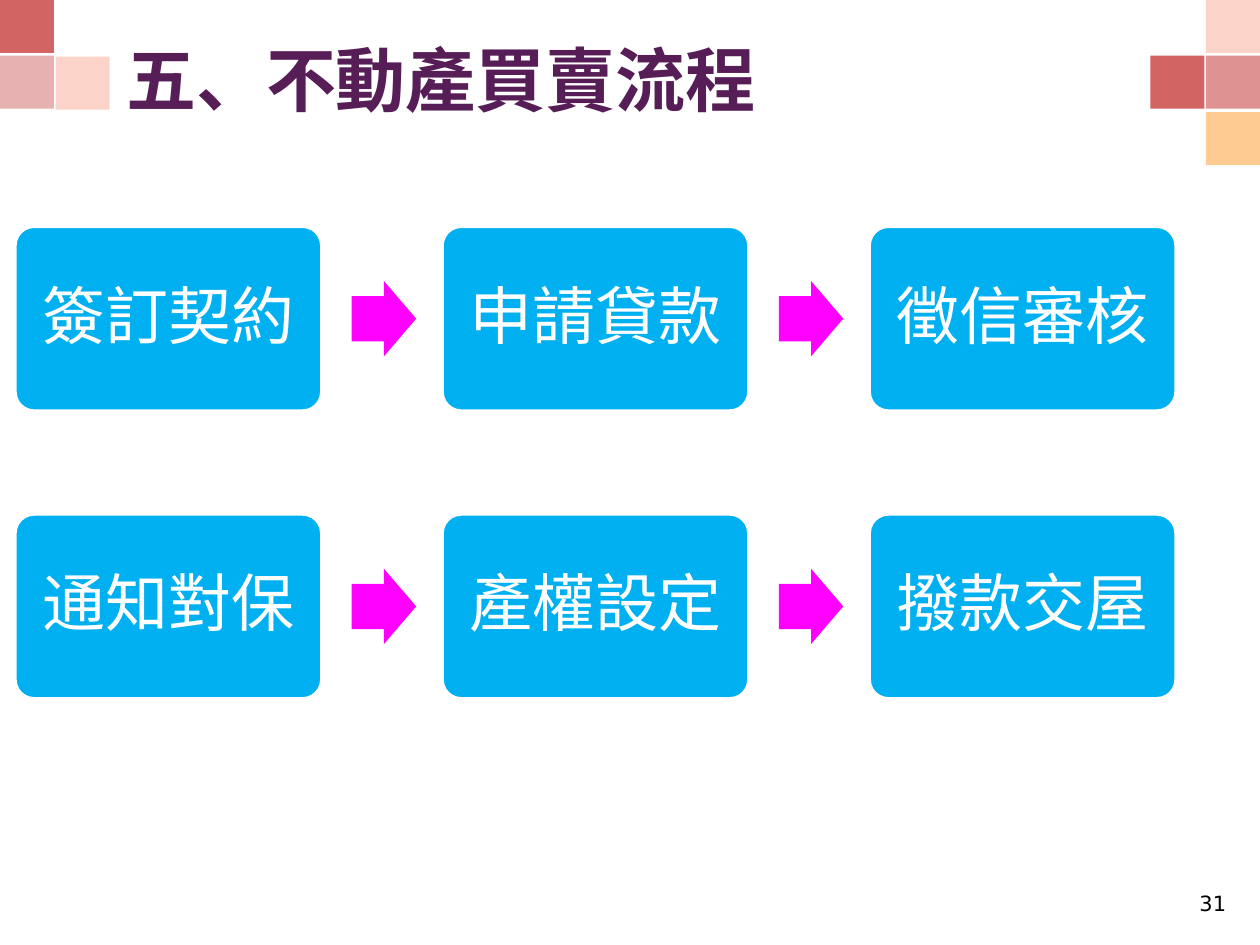
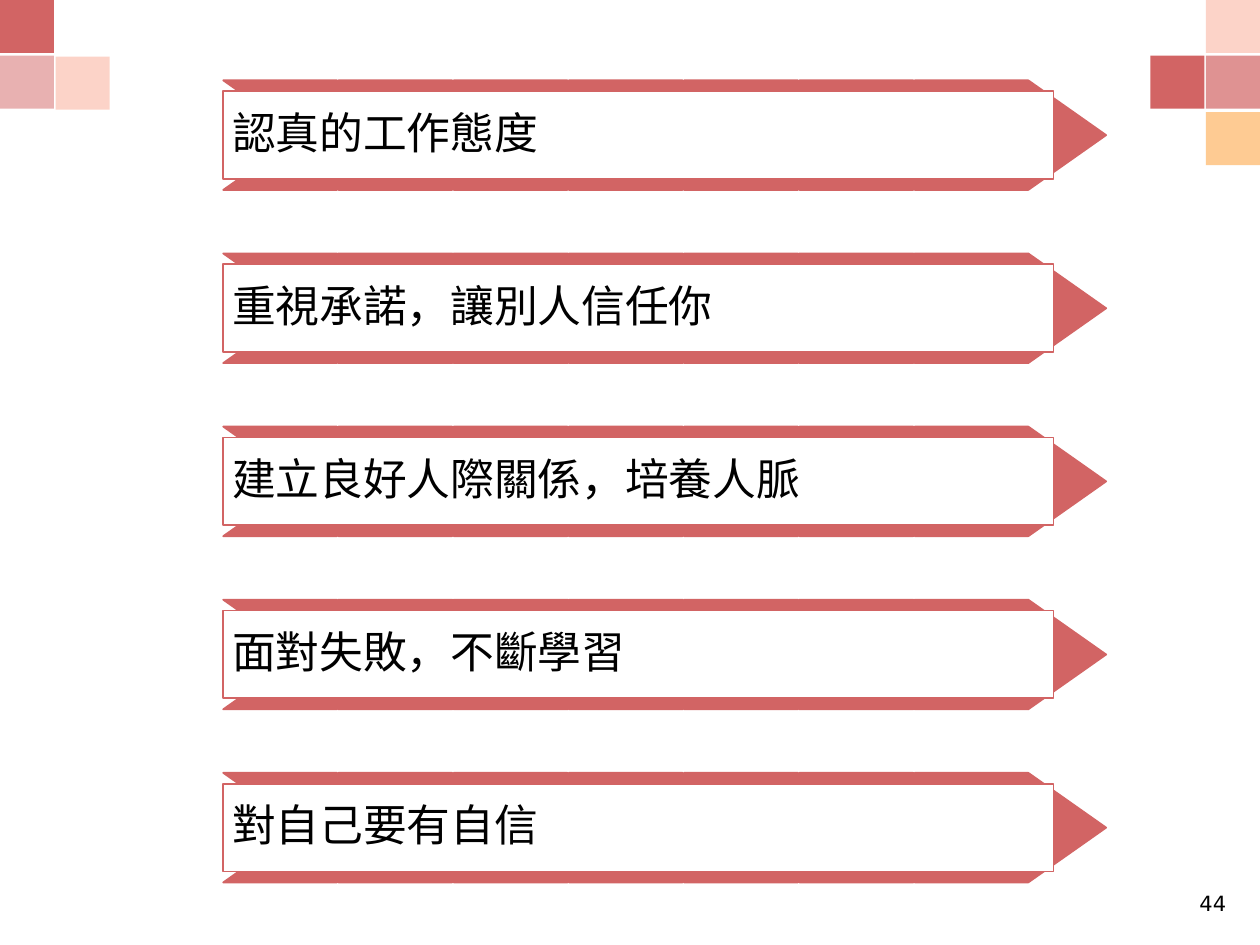
"""Build two slides: the property sale process and five working attitudes."""
from dataclasses import dataclass

from lxml.etree import SubElement
from pptx import Presentation
from pptx.dml.color import RGBColor
from pptx.enum.shapes import MSO_SHAPE as Shape
from pptx.enum.text import MSO_ANCHOR as Anchor, MSO_AUTO_SIZE as AutoSize, PP_ALIGN as Align
from pptx.oxml.ns import qn
from pptx.util import Cm, Pt


@dataclass(frozen=True)
class Theme:
    red: str = "D26464"
    peach: str = "FBA993"
    orange: str = "FEA94C"
    plum: str = "571D57"
    sky: str = "00B0F0"
    magenta: str = "FF00FF"
    white: str = "FFFFFF"
    black: str = "000000"
    cjk_font: str = "Noto Sans CJK SC"
    number_font: str = "DejaVu Sans"
    title_size: int = 40
    step_size: int = 36
    bar_size: int = 25
    number_size: int = 12


THEME = Theme()
TITLE_ONLY, BLANK = 5, 6
CORNER_SQUARES = [
    (24.31, 2.26, THEME.orange, 60),
    (24.31, 0, THEME.peach, 50),
    (1.12, 1.14, THEME.peach, 50),
    (0, 0, THEME.red, 100),
    (0, 1.12, THEME.red, 50),
    (24.31, 1.12, THEME.red, 70),
    (23.19, 1.12, THEME.red, 100),
]
STEP_ROWS = [
    ["簽訂契約", "申請貸款", "徵信審核"],
    ["通知對保", "產權設定", "撥款交屋"],
]
ATTITUDES = [
    "認真的工作態度",
    "重視承諾，讓別人信任你",
    "建立良好人際關係，培養人脈",
    "面對失敗，不斷學習",
    "對自己要有自信",
]


class Builder:
    def __init__(self, theme):
        self.theme = theme
        self.deck = Presentation()
        self.deck.slide_width, self.deck.slide_height = Cm(25.4), Cm(19.05)
        self.page = None

    def add_page(self, layout, number):
        self.page = self.deck.slides.add_slide(self.deck.slide_layouts[layout])
        for left, top, color, opacity in CORNER_SQUARES:
            self.shape(Shape.RECTANGLE, (left, top, 1.09, 1.07), color, opacity=opacity)
        box = self.page.shapes.add_textbox(Cm(23.7), Cm(17.83), Cm(1.27), Cm(0.89))
        self.set_text(box, str(number), self.theme.number_size, self.theme.black,
                      align=Align.RIGHT, anchor=Anchor.TOP, font=self.theme.number_font)

    def title(self, text):
        box = self.page.shapes.title
        box.left, box.top, box.width, box.height = Cm(2.29), Cm(0.79), Cm(20.57), Cm(1.57)
        self.set_text(box, text, self.theme.title_size, self.theme.plum, bold=True)

    def shape(self, kind, area, fill, line=None, opacity=100, adjust=(), parent=None):
        shapes = (parent or self.page).shapes
        shape = shapes.add_shape(kind, *map(Cm, area))
        shape.shadow.inherit = False
        shape.fill.solid()
        shape.fill.fore_color.rgb = RGBColor.from_string(fill)
        if opacity < 100:
            color = shape._element.spPr.find(qn("a:solidFill")).find(qn("a:srgbClr"))
            SubElement(color, qn("a:alpha"), val=str(opacity * 1000))
        if line:
            shape.line.color.rgb = RGBColor.from_string(line)
            shape.line.width = Pt(1)
        else:
            shape.line.fill.background()
        for index, value in enumerate(adjust):
            shape.adjustments[index] = value
        return shape

    def set_text(self, box, text, size, color, align=Align.LEFT, anchor=Anchor.MIDDLE,
                 font=None, bold=False, inset=None, spacing=None):
        frame = box.text_frame
        frame.word_wrap = True
        frame.auto_size = AutoSize.NONE
        frame.vertical_anchor = anchor
        if inset is not None:
            frame.margin_left = frame.margin_right = Cm(inset)
            frame.margin_top = frame.margin_bottom = Cm(inset)
        para = frame.paragraphs[0]
        para.text = text
        para.alignment = align
        if spacing:
            para.line_spacing = spacing
        para.font.size = Pt(size)
        para.font.bold = bold
        para.font.color.rgb = RGBColor.from_string(color)
        para.font.name = font or self.theme.cjk_font
        defaults = para._p.pPr.find(qn("a:defRPr"))
        SubElement(defaults, qn("a:ea"), typeface=para.font.name)

    def step(self, text, left, top, width, height):
        card = self.shape(Shape.ROUNDED_RECTANGLE, (left, top, width, height),
                          self.theme.sky, self.theme.white, adjust=[0.1])
        self.set_text(card, text, self.theme.step_size, self.theme.white,
                      align=Align.CENTER, inset=0.3, spacing=0.9)

    def arrow(self, left, middle):
        width, height = 1.3, 1.52
        self.shape(Shape.RIGHT_ARROW, (left, middle - height / 2, width, height),
                   self.theme.magenta, adjust=[0.6, 0.5])

    def attitude_bar(self, text, top):
        left, red = 4.5, self.theme.red
        group = self.page.shapes.add_group_shape()
        for index in range(7):
            self.shape(Shape.CHEVRON, (left + index * 13.94 / 6, top, 3.86, 2.21),
                       red, red, adjust=[0.71], parent=group)
        bar = self.shape(Shape.RECTANGLE, (left, top + 0.22, 16.74, 1.77),
                         self.theme.white, red, parent=group)
        self.set_text(bar, text, self.theme.bar_size, self.theme.black, inset=0.18, spacing=0.9)


def add_process_page(builder):
    builder.add_page(TITLE_ONLY, 31)
    builder.title("五、不動產買賣流程")
    width, height = 6.15, 3.69
    for row, steps in enumerate(STEP_ROWS):
        top = 4.58 + row * 5.8
        for column, text in enumerate(steps):
            left = 0.32 + column * 8.61
            builder.step(text, left, top, width, height)
            if column < len(steps) - 1:
                builder.arrow(left + 6.77, top + height / 2)


def add_attitude_page(builder):
    builder.add_page(BLANK, 44)
    for row, text in enumerate(ATTITUDES):
        builder.attitude_bar(text, 1.62 + row * 3.49)


def main():
    builder = Builder(THEME)
    add_process_page(builder)
    add_attitude_page(builder)
    builder.deck.save("out.pptx")


if __name__ == "__main__":
    main()
